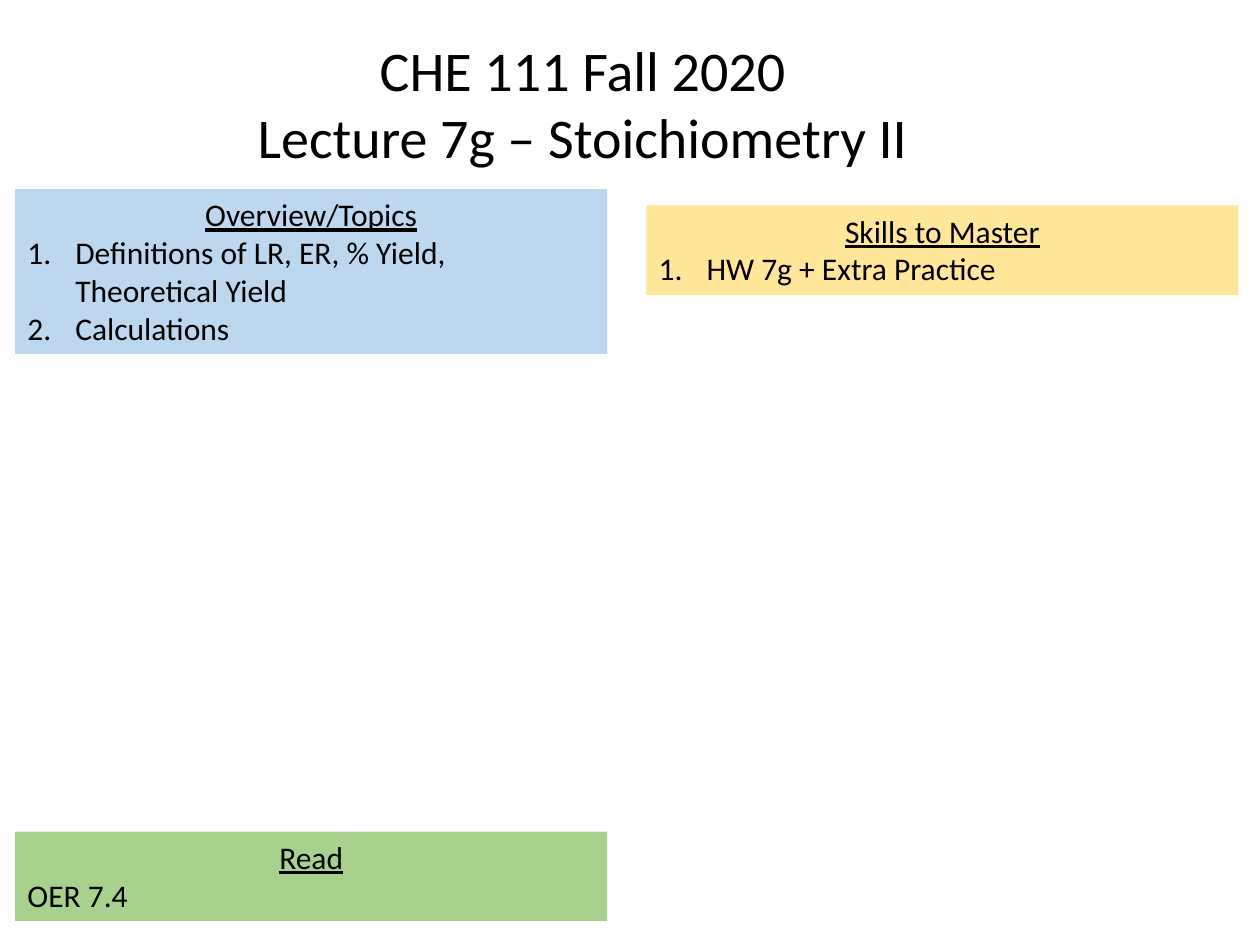
from pptx import Presentation
from pptx.dml.color import RGBColor
from pptx.enum import text
from pptx.oxml import xmlchemy as xml
from pptx.util import Inches, Pt

BLACK = RGBColor(0x00, 0x00, 0x00)
BLUE = RGBColor(0xBD, 0xD7, 0xEE)
GOLD = RGBColor(0xFF, 0xE6, 0x99)
GREEN = RGBColor(0xA9, 0xD1, 0x8E)
LEFT, RIGHT, WIDTH = 0.12, 5.13, 4.7


def write(para, words, size, **extra):
    run = para.add_run()
    run.text = words
    run.font.color.rgb = BLACK
    style = {"name": "Calibri", "size": Pt(size), **extra}
    for key, value in style.items():
        setattr(run.font, key, value)


def number(para):
    props = para._p.get_or_add_pPr()
    props.set("marL", str(Inches(0.38)))
    props.set("indent", str(-Inches(0.38)))
    bullet = xml.OxmlElement("a:buAutoNum")
    bullet.set("type", "arabicPeriod")
    props.append(bullet)


def add_box(slide, box, wrap):
    shape = slide.shapes.add_textbox(*map(Inches, box))
    frame = shape.text_frame
    frame.word_wrap = wrap
    frame.auto_size = text.MSO_AUTO_SIZE.SHAPE_TO_FIT_TEXT
    frame.paragraphs[0].alignment = text.PP_ALIGN.CENTER
    return shape, frame


def add_panel(slide, box, color, head, lines, listed=True):
    shape, frame = add_box(slide, box, True)
    shape.fill.solid()
    shape.fill.fore_color.rgb = color
    write(frame.paragraphs[0], head, 18, underline=True)
    for line in lines:
        para = frame.add_paragraph()
        if listed:
            number(para)
        write(para, line, 18)


def add_title(slide, box, lines):
    shape, frame = add_box(slide, box, False)
    write(frame.paragraphs[0], lines[0], 32)
    for line in lines[1:]:
        para = frame.add_paragraph()
        para.alignment = text.PP_ALIGN.CENTER
        write(para, line, 32)


def main():
    deck = Presentation()
    deck.slide_width, deck.slide_height = Inches(10), Inches(7.5)
    slide = deck.slides.add_slide(deck.slide_layouts[6])
    add_panel(slide, (LEFT, 1.5, WIDTH, 1.31), BLUE, "Overview/Topics",
              ["Definitions of LR, ER, % Yield, Theoretical Yield", "Calculations"])
    add_panel(slide, (RIGHT, 1.63, WIDTH, 0.71), GOLD, "Skills to Master",
              ["HW 7g + Extra Practice"])
    add_panel(slide, (LEFT, 6.6, WIDTH, 0.71), GREEN, "Read", ["OER 7.4"], listed=False)
    add_title(slide, (1.92, 0.23, 5.41, 1.18),
              ["CHE 111 Fall 2020", "Lecture 7g – Stoichiometry II"])
    deck.save("out.pptx")


if __name__ == "__main__":
    main()
